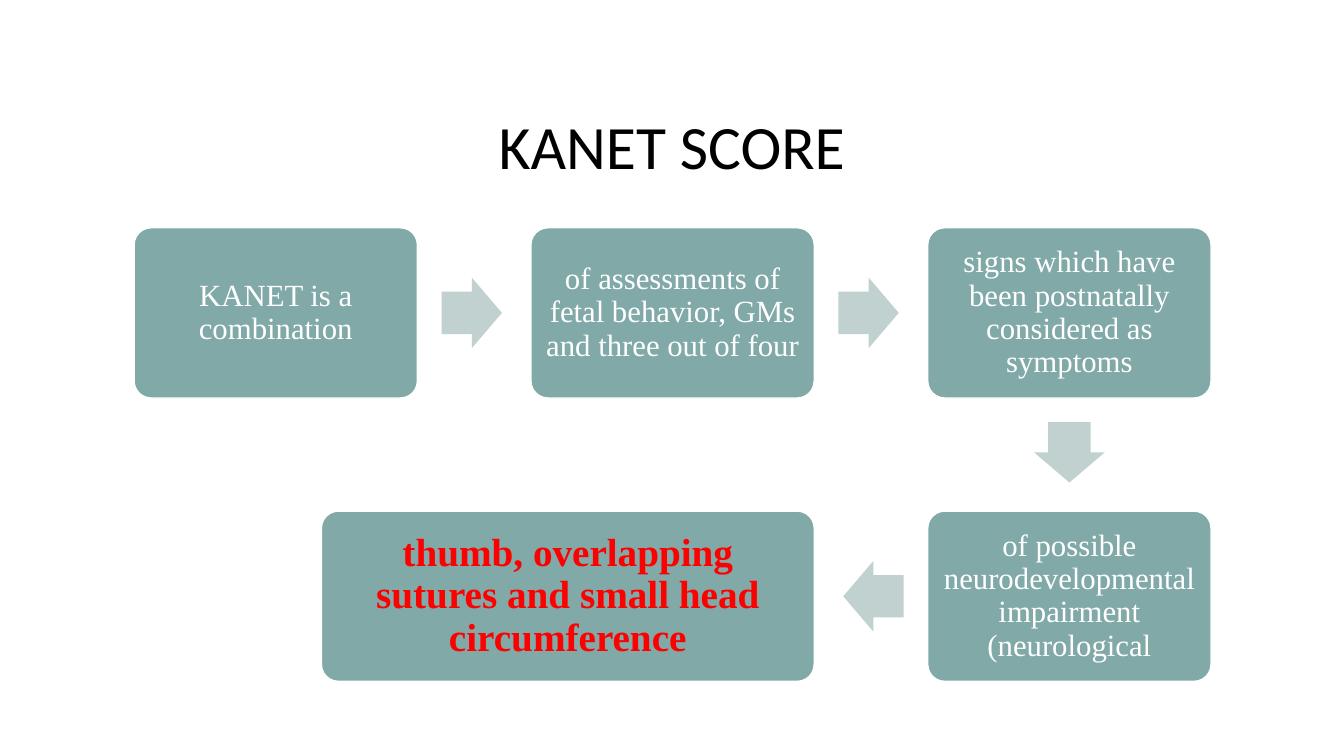
from math import cos, radians, sin

from pptx import Presentation
from pptx.dml.color import RGBColor
from pptx.enum.shapes import MSO_SHAPE as Shape
from pptx.enum.text import MSO_ANCHOR as Anchor, PP_ALIGN as Align
from pptx.util import Cm, Pt

STEP_W, STEP_H = 7.14, 4.29
LAST_W = 12.42
PITCH_X, PITCH_Y = 10, 7.14
ARROW_W, ARROW_H = 1.52, 1.78
ARROW_GAP = 1.37  # from the edge of a step to the middle of its arrow
STEPS = [  # column, row, direction of the arrow that follows, text
    (0, 0, 0, "KANET is a combination"),
    (1, 0, 0, "of assessments of fetal behavior, GMs and three out of four"),
    (2, 0, 90, "signs which have been postnatally considered as symptoms"),
    (2, 1, 180, "of possible neurodevelopmental impairment (neurological"),
]
LAST = "thumb, overlapping sutures and small head circumference"


def rgb(code):
    return RGBColor.from_string(code)


def write(frame, text, size, font, color, anchor, inset, bold=False):
    frame.word_wrap = True
    frame.vertical_anchor = anchor
    frame.margin_left = frame.margin_right = Cm(inset)
    frame.margin_top = frame.margin_bottom = Cm(inset)
    para = frame.paragraphs[0]
    para.text = text
    para.alignment = Align.CENTER
    para.line_spacing = 0.9
    para.font.size = Pt(size)
    para.font.name = font
    para.font.bold = bold
    para.font.color.rgb = rgb(color)


def add_title(slide, x, y, w, h):
    box = slide.shapes.add_textbox(Cm(x), Cm(y), Cm(w), Cm(h))
    write(box.text_frame, "KANET SCORE", 44, "Calibri", "000000",
          Anchor.BOTTOM, 0.13)


def add_solid(slide, kind, x, y, w, h, fill, adjust):
    shape = slide.shapes.add_shape(kind, Cm(x), Cm(y), Cm(w), Cm(h))
    shape.shadow.inherit = False
    shape.fill.solid()
    shape.fill.fore_color.rgb = rgb(fill)
    for i, value in enumerate(adjust):
        shape.adjustments[i] = value
    return shape


def add_step(slide, x, y, w, text, size=22, color="FFFFFF", inset=0.23,
             bold=False):
    step = add_solid(slide, Shape.ROUNDED_RECTANGLE, x, y, w, STEP_H,
                     "80A9A7", [0.1])
    step.line.color.rgb = rgb("FFFFFF")
    step.line.width = Pt(1)
    write(step.text_frame, text, size, "Times New Roman", color,
          Anchor.MIDDLE, inset, bold)


def add_arrow(slide, x, y, turn):
    """Point from the step at x, y towards the next one."""
    mid_x = x + STEP_W / 2 + cos(radians(turn)) * (STEP_W / 2 + ARROW_GAP)
    mid_y = y + STEP_H / 2 + sin(radians(turn)) * (STEP_H / 2 + ARROW_GAP)
    arrow = add_solid(slide, Shape.RIGHT_ARROW, mid_x - ARROW_W / 2,
                      mid_y - ARROW_H / 2, ARROW_W, ARROW_H,
                      "C0D1D0", [0.6, 0.5])
    arrow.line.fill.background()
    arrow.rotation = turn


def add_flow(slide, left, top):
    for col, row, turn, text in STEPS:
        x, y = left + col * PITCH_X, top + row * PITCH_Y
        add_step(slide, x, y, STEP_W, text)
        add_arrow(slide, x, y, turn)
    right = left + PITCH_X + STEP_W
    add_step(slide, right - LAST_W, top + PITCH_Y, LAST_W, LAST,
             28, "FF0000", 0.3, True)


def main():
    deck = Presentation()
    deck.slide_width, deck.slide_height = Cm(33.87), Cm(19.05)
    slide = deck.slides.add_slide(deck.slide_layouts[6])
    add_title(slide, 2.33, 1.63, 29.21, 3.1)
    add_flow(slide, 3.38, 5.74)
    deck.save("out.pptx")


if __name__ == "__main__":
    main()
